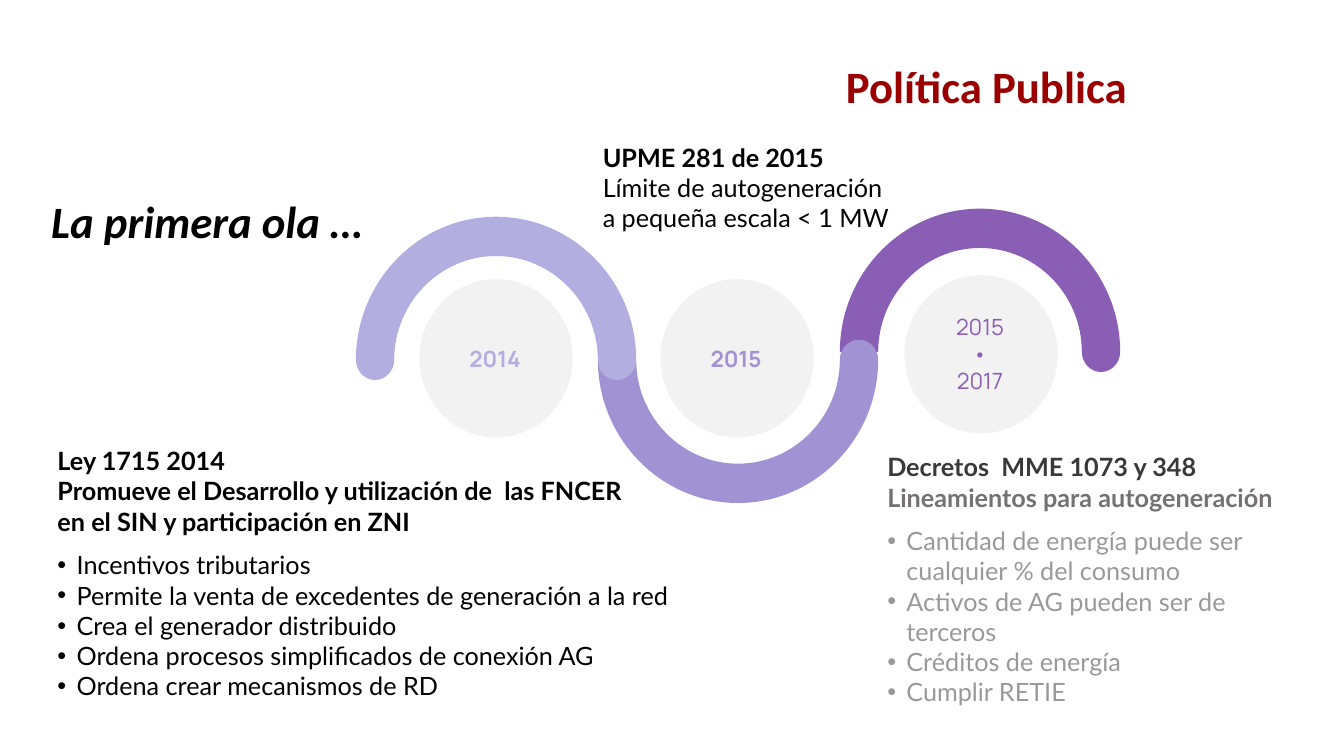
from lxml import etree
from pptx import Presentation
from pptx.dml.color import RGBColor
from pptx.enum import shapes, text
from pptx.oxml import ns
from pptx.util import Inches, Pt

RED = RGBColor(0x9A, 0x00, 0x00)
BLACK = RGBColor(0x00, 0x00, 0x00)
CHARCOAL = RGBColor(0x3B, 0x38, 0x38)
SLATE = RGBColor(0x76, 0x71, 0x71)
GREY = RGBColor(0x99, 0x99, 0x99)
PALE = RGBColor(0xF2, 0xF2, 0xF2)
LILAC = RGBColor(0xB2, 0xAE, 0xE0)
LAVENDER = RGBColor(0xA1, 0x92, 0xD3)
PURPLE = RGBColor(0x8B, 0x5E, 0xB5)
LEFT, CENTER = text.PP_ALIGN.LEFT, text.PP_ALIGN.CENTER


def half_ellipse(x, y, width, height):
    steps = [(1, 0.55), (0.55, 1), (0, 1), (-0.55, 1), (-1, 0.55), (-1, 0)]
    return [(Inches(x + width * across), Inches(y - height * up)) for across, up in steps]


def write(box, place, rows, font, size, alignment=LEFT):
    box.left, box.top, box.width, box.height = [Inches(length) for length in place]
    frame = box.text_frame
    frame.word_wrap = True
    frame.auto_size = text.MSO_AUTO_SIZE.NONE
    for index, (words, colour, bold, bullet) in enumerate(rows):
        para = frame.add_paragraph() if index else frame.paragraphs[0]
        para.text = words
        para.alignment = alignment
        para.line_spacing = 1.0
        para.space_before = para.space_after = Pt(0)
        properties = para._p.get_or_add_pPr()
        properties.set("marL", str(Inches(0.19) if bullet else 0))
        properties.set("indent", str(-Inches(0.19) if bullet else 0))
        if bullet:
            etree.SubElement(properties, ns.qn("a:buFont")).set("typeface", "Arial")
            etree.SubElement(properties, ns.qn("a:buChar")).set("char", "•")
        else:
            etree.SubElement(properties, ns.qn("a:buNone"))
        para.font.name = font
        para.font.size = Pt(size)
        para.font.bold = bold
        para.font.color.rgb = colour
    return frame.paragraphs


deck = Presentation()
deck.slide_width, deck.slide_height = Inches(13.33), Inches(7.5)
page = deck.slides.add_slide(deck.slide_layouts[3])
title, law, decrees = page.placeholders

waves = [
    (9.72, 3.49, 1, False, PURPLE),
    (7.32, 3.57, -1, False, LAVENDER),
    (4.92, 3.57, 1, True, LILAC),
]
for x, y, side, round_start, colour in waves:
    outline = half_ellipse(x, y, -1.39, 1.42 * side)
    outline += half_ellipse(x + 1.2, y, 0.19, -0.2 * side)
    outline += half_ellipse(x, y, 1.01, 1.03 * side)
    if round_start:
        outline += half_ellipse(x - 1.2, y, 0.19, -0.2 * side)
    builder = page.shapes.build_freeform(Inches(x - 1.39), Inches(y))
    builder.add_line_segments(outline, close=True)
    wave = builder.convert_to_shape()
    lines = list(wave._element.iter(ns.qn("a:lnTo")))
    for first, second, third in zip(lines[::3], lines[1::3], lines[2::3]):
        first.tag = ns.qn("a:cubicBezTo")
        for line in (second, third):
            first.append(line[0])
            line.getparent().remove(line)
    wave.shadow.inherit = False
    wave.fill.solid()
    wave.fill.fore_color.rgb = colour
    wave.line.fill.background()

milestones = [
    (4.16, 2.77, 3.37, 0.37, ["2014"], LILAC, True),
    (6.55, 2.77, 3.37, 0.37, ["2015"], LAVENDER, True),
    (8.97, 2.73, 3.06, 0.91, ["2015", "•", "2017"], PURPLE, False),
]
for left, top, label_top, label_height, years, colour, bold in milestones:
    circle = page.shapes.add_shape(
        shapes.MSO_SHAPE.OVAL, Inches(left), Inches(top), Inches(1.52), Inches(1.57)
    )
    circle.shadow.inherit = False
    circle.fill.solid()
    circle.fill.fore_color.rgb = PALE
    circle.line.fill.background()
    label = page.shapes.add_textbox(0, 0, 0, 0)
    rows = [(year, colour, bold, False) for year in years]
    write(label, (left + 0.14, label_top, 1.22, label_height), rows, "Manrope", 16, CENTER)

heading = write(
    title, (7.31, 0.45, 5.05, 0.87), [("Política Publica ", RED, True, False)], "Calibri", 32, CENTER
)
heading[0].line_spacing = 0.9

limit = page.shapes.add_textbox(0, 0, 0, 0)
limit_rows = [
    ("UPME 281 de 2015", BLACK, True, False),
    ("Límite de autogeneración", BLACK, False, False),
    ("a pequeña escala < 1 MW", BLACK, False, False),
]
write(limit, (5.88, 1.36, 4.05, 1.01), limit_rows, "Lato", 18)

first_wave = page.shapes.add_textbox(0, 0, 0, 0)
caption = write(
    first_wave, (0.41, 1.87, 3.59, 0.61), [("La primera ola …", BLACK, True, False)], "Calibri", 32
)
caption[0].font.italic = True

law_rows = [
    ("Ley 1715 2014", BLACK, True, False),
    (
        "Promueve el Desarrollo y utilización de  las FNCER \nen el SIN y participación en ZNI",
        BLACK, True, False,
    ),
]
law_points = [
    "Incentivos tributarios",
    "Permite la venta de excedentes de generación a la red",
    "Crea el generador distribuido",
    "Ordena procesos simplificados de conexión AG",
    "Ordena crear mecanismos de RD",
]
law_rows += [(point, BLACK, False, True) for point in law_points]
law_lines = write(law, (0.47, 4.37, 6.98, 2.66), law_rows, "Lato", 18)
law_lines[1].space_after = Pt(9.6)

decree_points = [
    "Cantidad de energía puede ser cualquier % del consumo",
    "Activos de AG pueden ser de terceros",
    "Créditos de energía",
    "Cumplir RETIE",
]
decree_rows = [("Decretos  MME 1073 y 348 ", CHARCOAL, True, False)]
decree_rows += [(point, GREY, False, True) for point in decree_points]
decree_lines = write(decrees, (8.7, 4.43, 4.49, 2.36), decree_rows, "Lato", 18)
decree_lines[0].space_after = Pt(9.6)
span = decree_lines[0].add_run()
span.text = "Lineamientos para autogeneración"
span.font.color.rgb = SLATE

deck.save("out.pptx")
